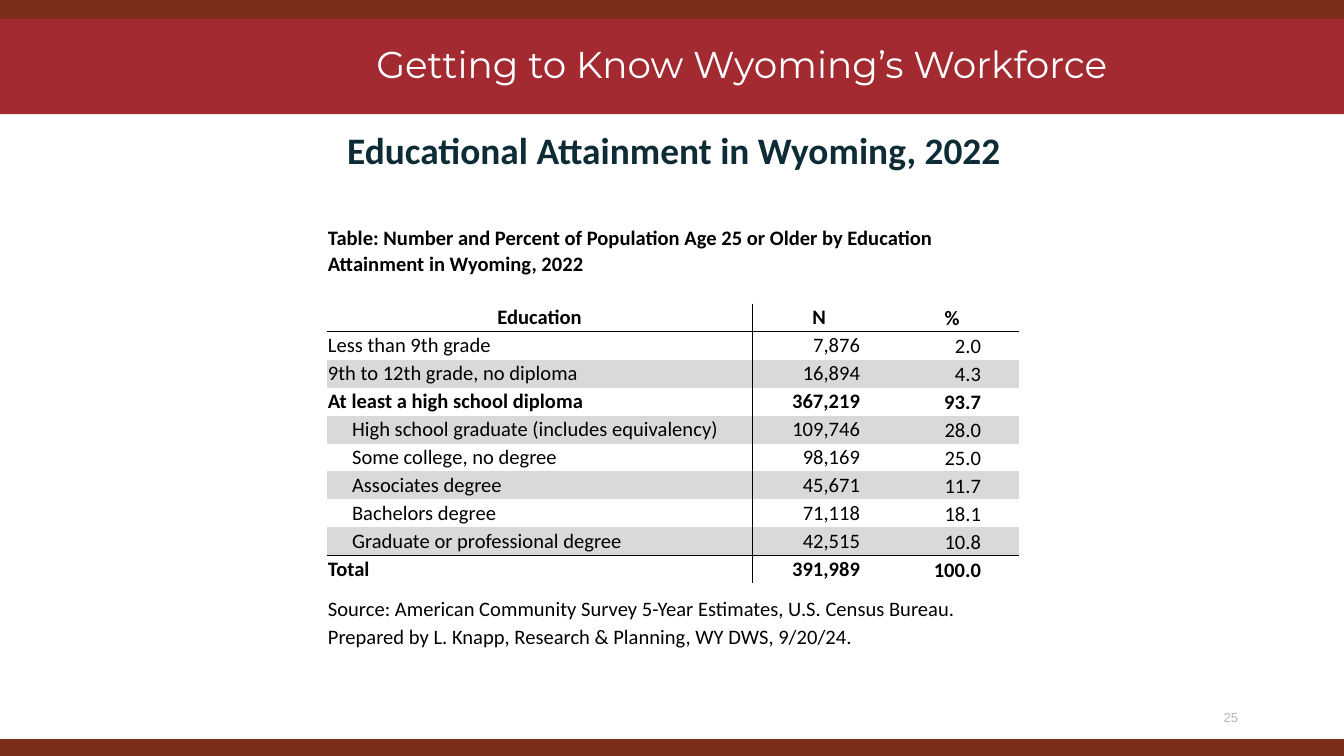
from dataclasses import dataclass

from lxml import etree
from pptx import Presentation
from pptx.dml.color import RGBColor
from pptx.enum.shapes import MSO_SHAPE
from pptx.enum.text import MSO_ANCHOR, PP_ALIGN
from pptx.oxml.ns import qn
from pptx.slide import Slide
from pptx.table import Table, _Cell
from pptx.text.text import TextFrame, _Paragraph
from pptx.util import Inches, Length, Pt

RECTANGLE = MSO_SHAPE.RECTANGLE
TOP, MIDDLE, BOTTOM = MSO_ANCHOR.TOP, MSO_ANCHOR.MIDDLE, MSO_ANCHOR.BOTTOM
LEFT, CENTER, RIGHT = PP_ALIGN.LEFT, PP_ALIGN.CENTER, PP_ALIGN.RIGHT

BROWN = RGBColor(0x7B, 0x2D, 0x19)
CRIMSON = RGBColor(0xA2, 0x2A, 0x30)
NAVY = RGBColor(0x0D, 0x2C, 0x36)
SILVER = RGBColor(0xAB, 0xB8, 0xC3)
STRIPE = RGBColor(0xD9, 0xD9, 0xD9)
WHITE = RGBColor(0xFF, 0xFF, 0xFF)
BLACK = RGBColor(0, 0, 0)

SLIDE_WIDTH, SLIDE_HEIGHT = Inches(10), Inches(5.625)
GRID_COLUMNS = 1000
UNIT = SLIDE_WIDTH // GRID_COLUMNS
TABLE_COLUMNS = (317, 99, 99)
LINE_ROW = Pt(15)
CELL_FORMAT = {"name": "Calibri", "size": Pt(11), "color": BLACK}


@dataclass(frozen=True)
class Box:
    column: int
    row: int
    columns: int
    rows: int

    def lengths(self) -> list[Length]:
        return [Length(value * UNIT) for value in (self.column, self.row, self.columns, self.rows)]


@dataclass(frozen=True)
class Band:
    box: Box
    color: RGBColor


@dataclass(frozen=True)
class Label:
    box: Box
    text: str
    anchor: MSO_ANCHOR
    alignment: PP_ALIGN
    font: dict
    spacing: float = 1.0
    margin: int = 0
    indent: int = 0


@dataclass(frozen=True)
class Education:
    level: str
    number: str
    percent: str
    bold: bool = False
    nested: bool = False


BANDS = (
    Band(Box(-3, 550, 1005, 19), BROWN),
    Band(Box(-2, -2, 1005, 87), CRIMSON),
    Band(Box(-2, -2, 1005, 16), BROWN),
    Band(Box(-2, 553, 1005, 16), BROWN),
)
LABELS = (
    Label(Box(27, 85, 937, 427), "Educational Attainment in Wyoming, 2022", TOP, CENTER,
          {"name": "Calibri", "size": Pt(20), "color": NAVY, "bold": True}, margin=50, indent=-38),
    Label(Box(706, 520, 225, 30), "25", MIDDLE, RIGHT,
          {"name": "Arial", "size": Pt(7), "color": SILVER}, spacing=0.8),
    Label(Box(162, 16, 780, 58), "Getting to Know Wyoming’s Workforce", BOTTOM, CENTER,
          {"name": "Montserrat", "size": Pt(20), "color": WHITE}),
)
CAPTION = "Table: Number and Percent of Population Age 25 or Older by Education Attainment in Wyoming, 2022"
SOURCE = "Source: American Community Survey 5-Year Estimates, U.S. Census Bureau."
PREPARED = "Prepared by L. Knapp, Research & Planning, WY DWS, 9/20/24."
LEVELS = (
    Education("Education", "N", "%", bold=True),
    Education("Less than 9th grade", "7,876", "2.0"),
    Education("9th to 12th grade, no diploma", "16,894", "4.3"),
    Education("At least a high school diploma", "367,219", "93.7", bold=True),
    Education("High school graduate (includes equivalency)", "109,746", "28.0", nested=True),
    Education("Some college, no degree", "98,169", "25.0", nested=True),
    Education("Associates degree", "45,671", "11.7", nested=True),
    Education("Bachelors degree", "71,118", "18.1", nested=True),
    Education("Graduate or professional degree", "42,515", "10.8", nested=True),
    Education("Total", "391,989", "100.0", bold=True),
)
FIRST_LEVEL_ROW = 2
SOURCE_ROW = FIRST_LEVEL_ROW + len(LEVELS)
PREPARED_ROW = SOURCE_ROW + 1


def write_text(paragraph: _Paragraph, text: str, font: dict) -> None:
    run = paragraph.add_run()
    run.text = text
    for name, value in font.items():
        if name == "color":
            run.font.color.rgb = value
        else:
            setattr(run.font, name, value)


def set_margins(target: TextFrame | _Cell, left: int, top: int, right: int, bottom: int) -> None:
    margins = {"left": left, "top": top, "right": right, "bottom": bottom}
    for side, units in margins.items():
        setattr(target, f"margin_{side}", Length(units * UNIT))


def add_band(slide: Slide, band: Band) -> None:
    shape = slide.shapes.add_shape(RECTANGLE, *band.box.lengths())
    shape.shadow.inherit = False
    shape.fill.solid()
    shape.fill.fore_color.rgb = band.color
    shape.line.fill.background()


def add_label(slide: Slide, label: Label) -> None:
    frame = slide.shapes.add_textbox(*label.box.lengths()).text_frame
    frame.word_wrap = True
    frame.vertical_anchor = label.anchor
    set_margins(frame, 10, 10, 10, 10)
    paragraph = frame.paragraphs[0]
    properties = paragraph._p.get_or_add_pPr()
    properties.set("marL", str(label.margin * UNIT))
    properties.set("indent", str(label.indent * UNIT))
    paragraph.alignment = label.alignment
    paragraph.line_spacing = label.spacing
    write_text(paragraph, label.text, label.font)


def set_borders(cell: _Cell, sides: str) -> None:
    properties = cell._tc.get_or_add_tcPr()
    for side in "LRTB":
        line = etree.SubElement(properties, qn(f"a:ln{side}"), w=str(Pt(0.5)))
        if side in sides:
            fill = etree.SubElement(line, qn("a:solidFill"))
            etree.SubElement(fill, qn("a:srgbClr"), val=str(BLACK))
        else:
            etree.SubElement(line, qn("a:noFill"))


def fill_level(table: Table, index: int, level: Education) -> None:
    header, last = index == 0, index == len(LEVELS) - 1
    horizontal = ("T" if index == 1 or last else "") + ("B" if header or index == len(LEVELS) - 2 else "")
    left = 19 if level.nested else 1
    rights = (1, 1, 1) if header else (1, 19, 28)
    alignments = (CENTER,) * 3 if header else (LEFT, RIGHT, RIGHT)
    for column, text in enumerate((level.level, level.number, level.percent)):
        cell = table.cell(FIRST_LEVEL_ROW + index, column)
        set_margins(cell, left if column == 0 else 1, 1, rights[column], 0)
        cell.vertical_anchor = BOTTOM if column == 2 else TOP
        set_borders(cell, horizontal + ("R", "L", "")[column])
        if index % 2 == 0 and not header:
            cell.fill.solid()
            cell.fill.fore_color.rgb = STRIPE
        else:
            cell.fill.background()
        paragraph = cell.text_frame.paragraphs[0]
        paragraph.alignment = alignments[column]
        write_text(paragraph, text, {**CELL_FORMAT, "bold": level.bold})


def fill_note(table: Table, row: int, text: str, span: int, bold: bool) -> None:
    cell = table.cell(row, 0)
    cell.merge(table.cell(row, span - 1))
    write_text(cell.text_frame.paragraphs[0], text, {**CELL_FORMAT, "bold": bold})


def add_education_table(slide: Slide) -> None:
    heights = [41 * UNIT, 19 * UNIT] + [LINE_ROW] * len(LEVELS) + [29 * UNIT, LINE_ROW]
    box = Box(243, 165, sum(TABLE_COLUMNS), 318)
    table = slide.shapes.add_table(len(heights), len(TABLE_COLUMNS), *box.lengths()).table
    table.first_row = table.horz_banding = False
    for column, units in zip(table.columns, TABLE_COLUMNS):
        column.width = Length(units * UNIT)
    for row, height in zip(table.rows, heights):
        row.height = Length(height)
    for row in (0, 1, SOURCE_ROW, PREPARED_ROW):
        for cell in table.rows[row].cells:
            set_margins(cell, 1, 1, 1, 0)
            cell.vertical_anchor = BOTTOM
            set_borders(cell, "")
            cell.fill.background()
            etree.SubElement(cell.text_frame.paragraphs[0]._p, qn("a:endParaRPr"), sz="1100")
    fill_note(table, 0, CAPTION, 3, True)
    fill_note(table, SOURCE_ROW, SOURCE, 3, False)
    fill_note(table, PREPARED_ROW, PREPARED, 2, False)
    for index, level in enumerate(LEVELS):
        fill_level(table, index, level)


def main() -> None:
    presentation = Presentation()
    presentation.slide_width, presentation.slide_height = SLIDE_WIDTH, SLIDE_HEIGHT
    slide = presentation.slides.add_slide(presentation.slide_layouts[6])
    for band in BANDS:
        add_band(slide, band)
    add_education_table(slide)
    for label in LABELS:
        add_label(slide, label)
    presentation.save("out.pptx")


if __name__ == "__main__":
    main()
